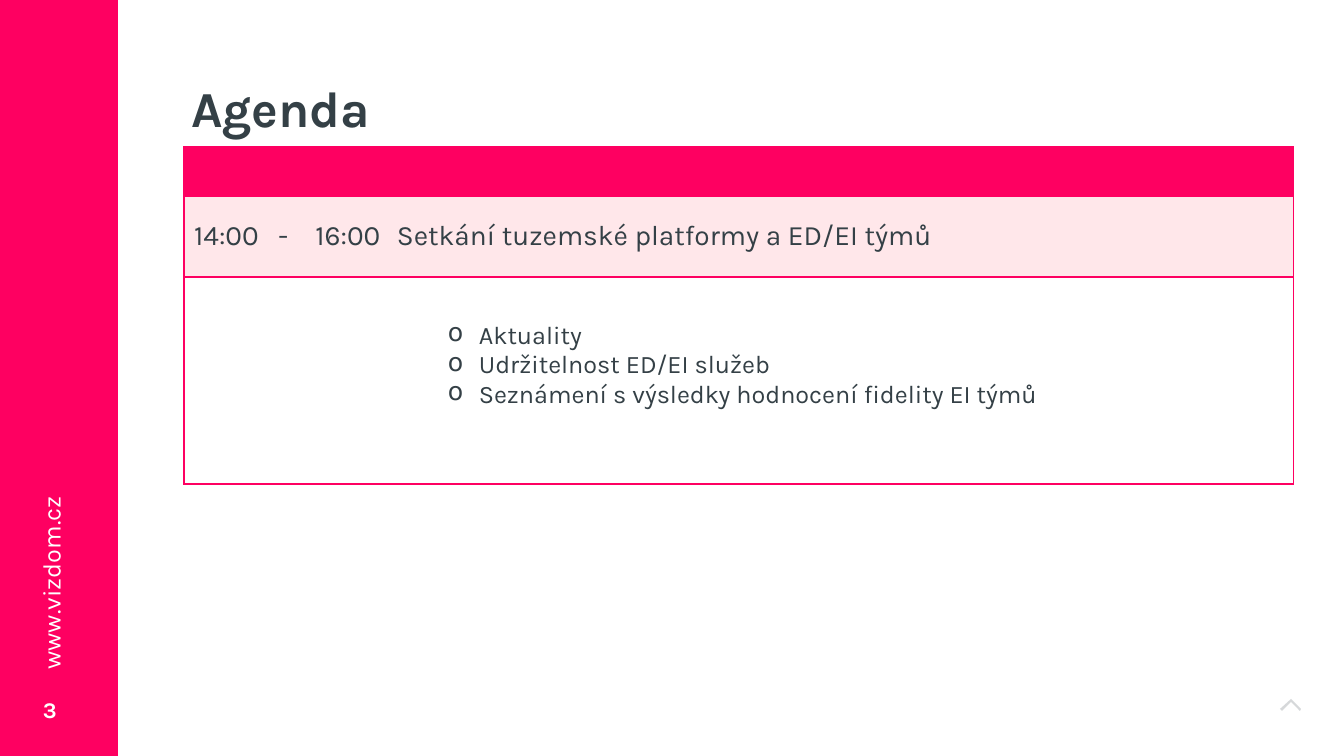
from lxml.etree import SubElement
from pptx import Presentation
from pptx.dml.color import RGBColor
from pptx.enum.shapes import MSO_SHAPE as Shape
from pptx.enum.text import MSO_ANCHOR as Anchor, PP_ALIGN as Align
from pptx.oxml import parse_xml
from pptx.oxml.ns import nsdecls, qn
from pptx.util import Pt

PINK = RGBColor(0xFE, 0x00, 0x61)
PALE = RGBColor(0xFF, 0xE7, 0xEA)
WHITE = RGBColor(0xFF, 0xFF, 0xFF)
SLATE = RGBColor(0x34, 0x40, 0x46)
FONT = "Karla"
PX = 914400 / 100.8

# Content
TITLE = "Agenda"
SITE = "www.vizdom.cz"
PAGE_NUMBER = "3"
SESSION = ["14:00", "- ", "16:00", "Setkání tuzemské platformy a ED/EI týmů"]
TOPICS = ["Aktuality", "Udržitelnost ED/EI služeb",
          "Seznámení s výsledky hodnocení fidelity EI týmů"]
COLUMNS = [85, 35, 88, 902]
ROWS = [(49, PINK), (81, PALE), (207, WHITE)]
CHEVRON = [(1291, 699), (1301, 709), (1300, 711), (1291, 702),
           (1282, 711), (1280, 709)]


def px(length):
    return round(length * PX)


def write(frame, lines, size=20, color=SLATE, bold=False, align=Align.LEFT,
          spacing=None, bullet=None):
    for index, line in enumerate(lines):
        para = frame.paragraphs[0] if index == 0 else frame.add_paragraph()
        if bullet:
            props = para._p.get_or_add_pPr()
            props.set("marL", str(px(82)))
            props.set("indent", str(px(-31)))
            SubElement(props, qn("a:buChar")).set("char", bullet)
        para.alignment = align
        if spacing:
            para.line_spacing = spacing
        span = para.add_run()
        span.text = line
        span.font.name, span.font.size = FONT, Pt(size)
        span.font.bold, span.font.color.rgb = bold, color


def add_text(page, text, area, inset=10, anchor=Anchor.TOP, turn=0, **style):
    box = page.shapes.add_textbox(*map(px, area))
    box.rotation = turn
    frame = box.text_frame
    frame.word_wrap = True
    frame.vertical_anchor = anchor
    frame.margin_left = frame.margin_right = px(inset)
    frame.margin_top = frame.margin_bottom = px(5)
    write(frame, [text], **style)


def set_borders(cell, sides):
    props = cell._tc.get_or_add_tcPr()
    for place, side in enumerate("LRTB"):
        paint = (f'<a:solidFill><a:srgbClr val="{PINK}"/></a:solidFill>'
                 if side in sides else "<a:noFill/>")
        props.insert(place, parse_xml(
            f'<a:ln{side} {nsdecls("a")} w="{Pt(1)}">{paint}</a:ln{side}>'))


def paint_shape(shape, color):
    shape.shadow.inherit = False
    shape.fill.solid()
    shape.fill.fore_color.rgb = color
    shape.line.fill.background()


deck = Presentation()
deck.slide_width, deck.slide_height = px(1344), px(756)
page = deck.slides.add_slide(deck.slide_layouts[6])

# Corner chevron
outline = page.shapes.build_freeform(*CHEVRON[0], scale=PX)
outline.add_line_segments(CHEVRON[1:], close=True)
chevron = outline.convert_to_shape()
paint_shape(chevron, SLATE)
tint = chevron.fill._xPr.find(qn("a:solidFill"))[0]
SubElement(tint, qn("a:alpha")).set("val", "20000")

# Side band with site and page number
band = page.shapes.add_shape(Shape.RECTANGLE, 0, 0, px(118), px(756))
paint_shape(band, PINK)
add_text(page, PAGE_NUMBER, (33, 680, 50, 60), anchor=Anchor.MIDDLE,
         size=16, color=WHITE, bold=True)
add_text(page, SITE, (-69, 539, 240, 41), turn=270, size=18, color=WHITE)

# Title
add_text(page, TITLE, (191, 79, 313, 69), inset=0, size=36, bold=True,
         spacing=0.9)

# Agenda table
table = page.shapes.add_table(
    len(ROWS), len(COLUMNS), px(184), px(147), px(sum(COLUMNS)),
    px(sum(height for height, _ in ROWS))).table
table.first_row = table.horz_banding = False
for column, width in zip(table.columns, COLUMNS):
    column.width = px(width)
last = len(COLUMNS) - 1
for row, (height, color) in zip(table.rows, ROWS):
    row.height = px(height)
    for index, cell in enumerate(row.cells):
        cell.fill.solid()
        cell.fill.fore_color.rgb = color
        cell.vertical_anchor = Anchor.MIDDLE
        cell.margin_left = cell.margin_right = px(5)
        cell.margin_top = cell.margin_bottom = 0
        set_borders(cell, "TB" + {0: "L", last: "R"}.get(index, ""))

for index, text in enumerate(SESSION):
    write(table.cell(1, index).text_frame, [text],
          align=Align.LEFT if index == last else Align.CENTER)
topics = table.cell(2, last)
topics.margin_bottom = px(30)
write(topics.text_frame, TOPICS, size=18, bullet="o")

deck.save("out.pptx")
